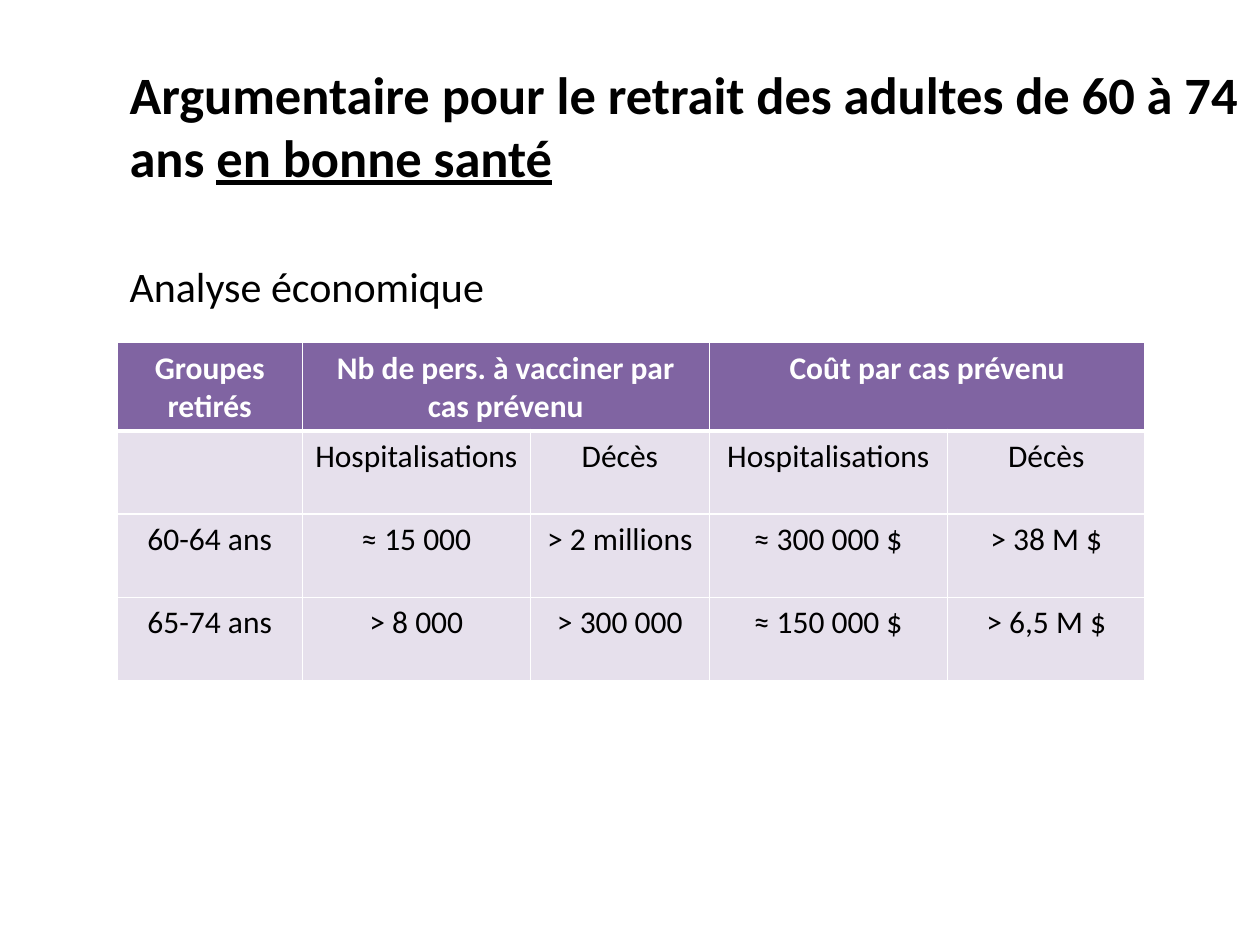
import pptx
import pptx.dml.color
import pptx.enum.text
import pptx.oxml
import pptx.oxml.ns
import pptx.util
from pptx.util import Inches

FONT = "Calibri"
BLACK, WHITE = "000000", "FFFFFF"
PURPLE, LAVENDER = "8064A2", "E6E0EC"

LEFT = Inches(0.93)
COLUMN_WIDTHS = [1.47, 1.81, 1.42, 1.89, 1.57]
ROW_HEIGHT = Inches(0.66)
ROWS = [
    ["Groupes retirés", "Nb de pers. à vacciner par cas prévenu", "", "Coût par cas prévenu", ""],
    ["", "Hospitalisations", "Décès", "Hospitalisations", "Décès"],
    ["60-64 ans", "≈ 15 000", "> 2 millions", "≈ 300 000 $", "> 38 M $"],
    ["65-74 ans", "> 8 000", "> 300 000", "≈ 150 000 $", "> 6,5 M $"],
]
MERGED_HEADER_COLUMNS = [1, 3]


def rgb(color):
    return pptx.dml.color.RGBColor.from_string(color)


def add_text(paragraph, text, size, color=BLACK, bold=False, underline=False):
    run = paragraph.add_run()
    run.text = text
    font = run.font
    font.name = FONT
    font.size = pptx.util.Pt(size)
    font.bold = bold
    font.underline = underline
    font.color.rgb = rgb(color)


def add_text_box(slide, left, top, width, height):
    """Add a wrapping text box and return its first paragraph."""
    text_frame = slide.shapes.add_textbox(left, top, width, height).text_frame
    text_frame.word_wrap = True
    return text_frame.paragraphs[0]


def add_title(slide, left, top, width, height):
    paragraph = add_text_box(slide, left, top, width, height)
    add_text(paragraph, "Argumentaire pour le retrait des adultes de 60 à 74 ans ", 30, bold=True)
    add_text(paragraph, "en bonne santé", 30, bold=True, underline=True)


def add_subtitle(slide, left, top, width, height):
    paragraph = add_text_box(slide, left, top, width, height)
    add_text(paragraph, "Analyse économique", 24)


def set_borders(cell, color, widths):
    """Draw cell borders; widths maps L, R, T and B to points."""
    properties = cell._tc.get_or_add_tcPr()
    for index, (side, width) in enumerate(widths.items()):
        line = pptx.oxml.parse_xml(
            f'<a:ln{side} {pptx.oxml.ns.nsdecls("a")} w="{pptx.util.Pt(width)}">'
            f'<a:solidFill><a:srgbClr val="{color}"/></a:solidFill></a:ln{side}>'
        )
        properties.insert(index, line)


def format_cell(cell, text, is_header, top_border, bottom_border):
    cell.fill.solid()
    cell.fill.fore_color.rgb = rgb(PURPLE if is_header else LAVENDER)
    set_borders(cell, WHITE, {"L": 1, "R": 1, "T": top_border, "B": bottom_border})
    paragraph = cell.text_frame.paragraphs[0]
    paragraph.alignment = pptx.enum.text.PP_ALIGN.CENTER
    if text:
        add_text(paragraph, text, 18, color=WHITE if is_header else BLACK, bold=is_header)


def add_cost_table(slide, left, top, width, height):
    frame = slide.shapes.add_table(len(ROWS), len(COLUMN_WIDTHS), left, top, width, height)
    table = frame.table
    for column, column_width in zip(table.columns, COLUMN_WIDTHS):
        column.width = Inches(column_width)
    for row_index, texts in enumerate(ROWS):
        table.rows[row_index].height = ROW_HEIGHT
        for column_index, text in enumerate(texts):
            format_cell(
                table.cell(row_index, column_index),
                text,
                is_header=row_index == 0,
                top_border=3 if row_index == 1 else 1,
                bottom_border=3 if row_index == 0 else 1,
            )
    for column_index in MERGED_HEADER_COLUMNS:
        table.cell(0, column_index).merge(table.cell(0, column_index + 1))


def main():
    presentation = pptx.Presentation()
    presentation.slide_width = Inches(10)
    presentation.slide_height = Inches(7.5)
    slide = presentation.slides.add_slide(presentation.slide_layouts[6])
    table_width = Inches(sum(COLUMN_WIDTHS))
    add_title(slide, LEFT, Inches(0.44), presentation.slide_width - LEFT, Inches(1.11))
    add_subtitle(slide, LEFT, Inches(2.02), table_width, Inches(0.81))
    add_cost_table(slide, LEFT, Inches(2.72), table_width, ROW_HEIGHT * len(ROWS))
    presentation.save("out.pptx")


if __name__ == "__main__":
    main()
